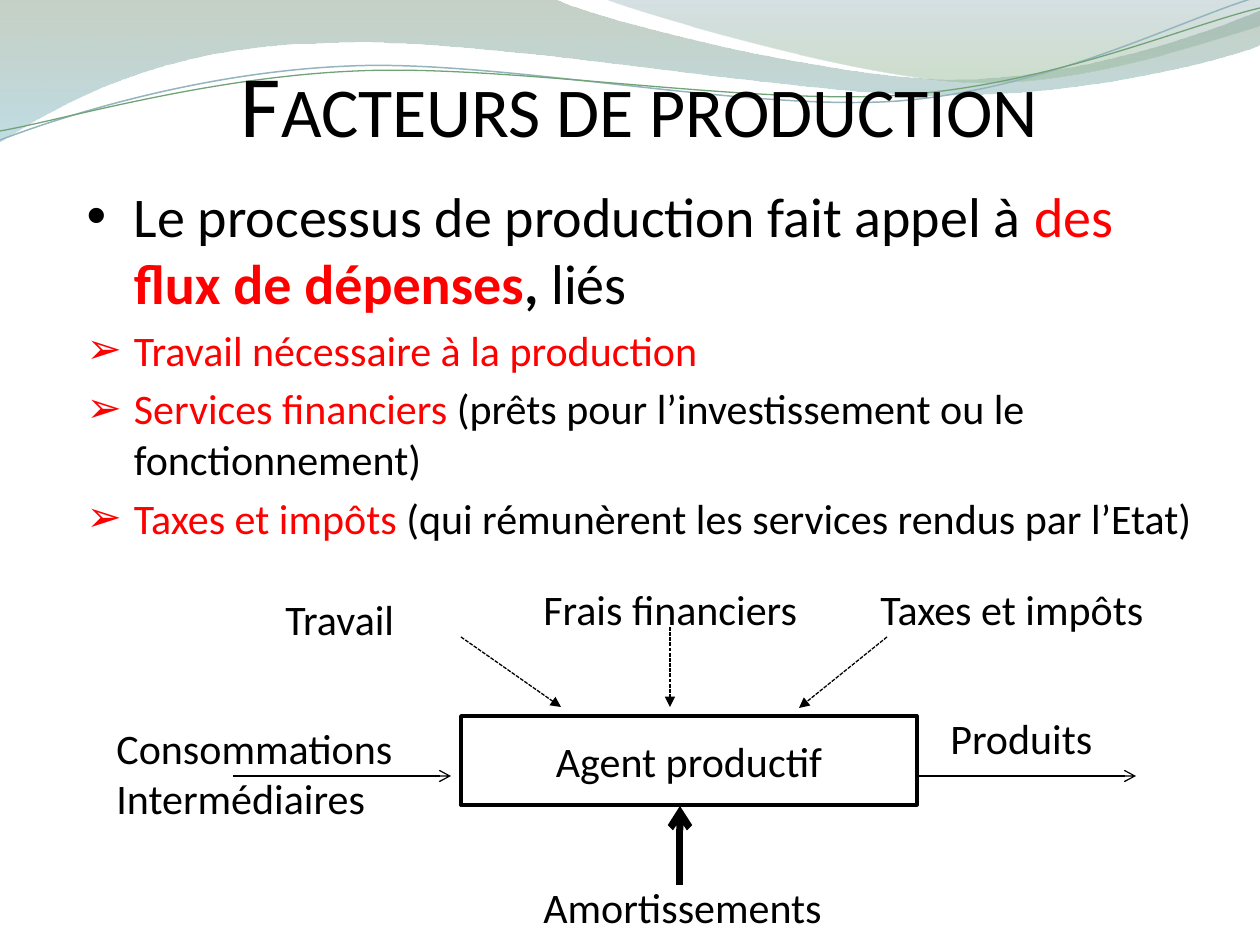
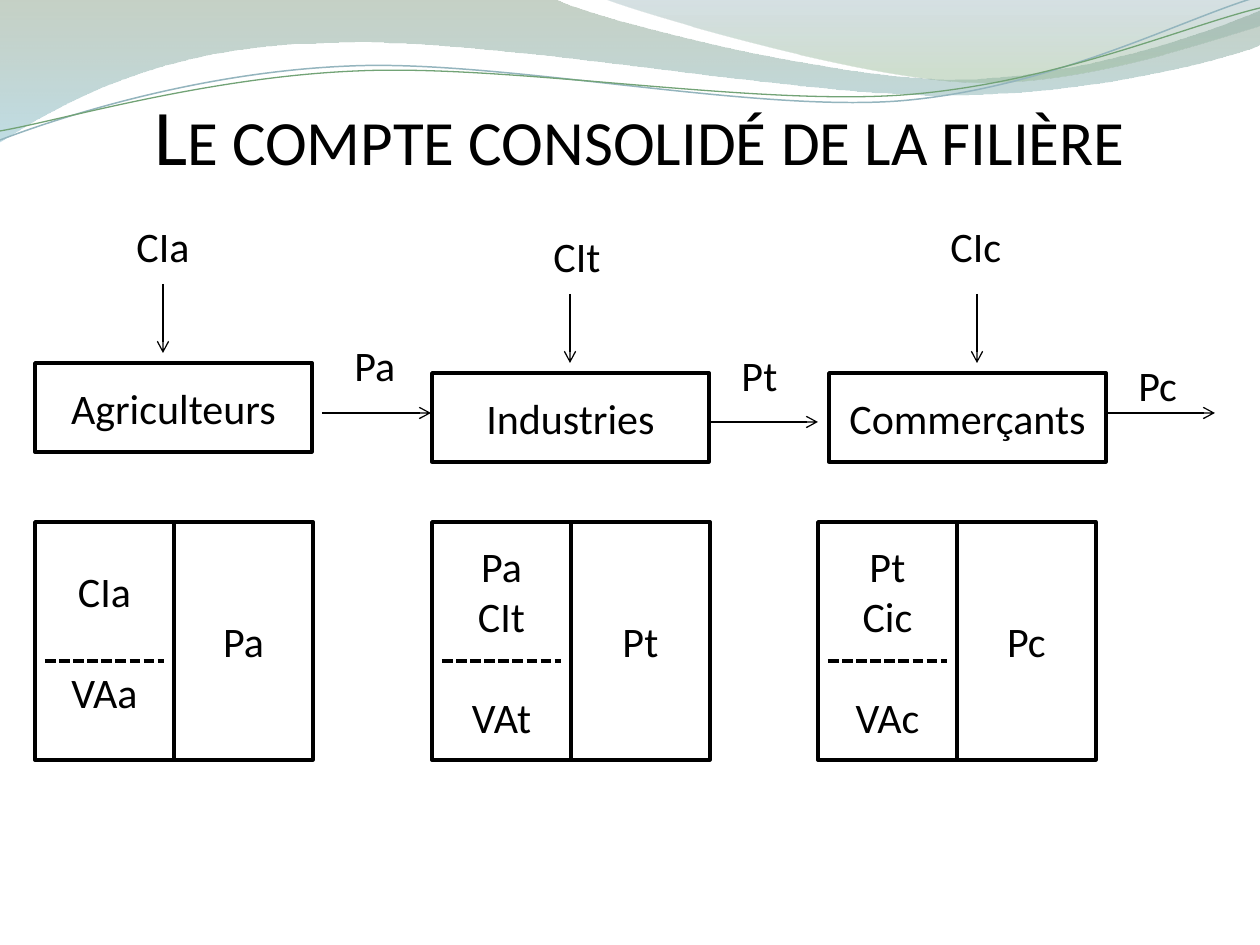
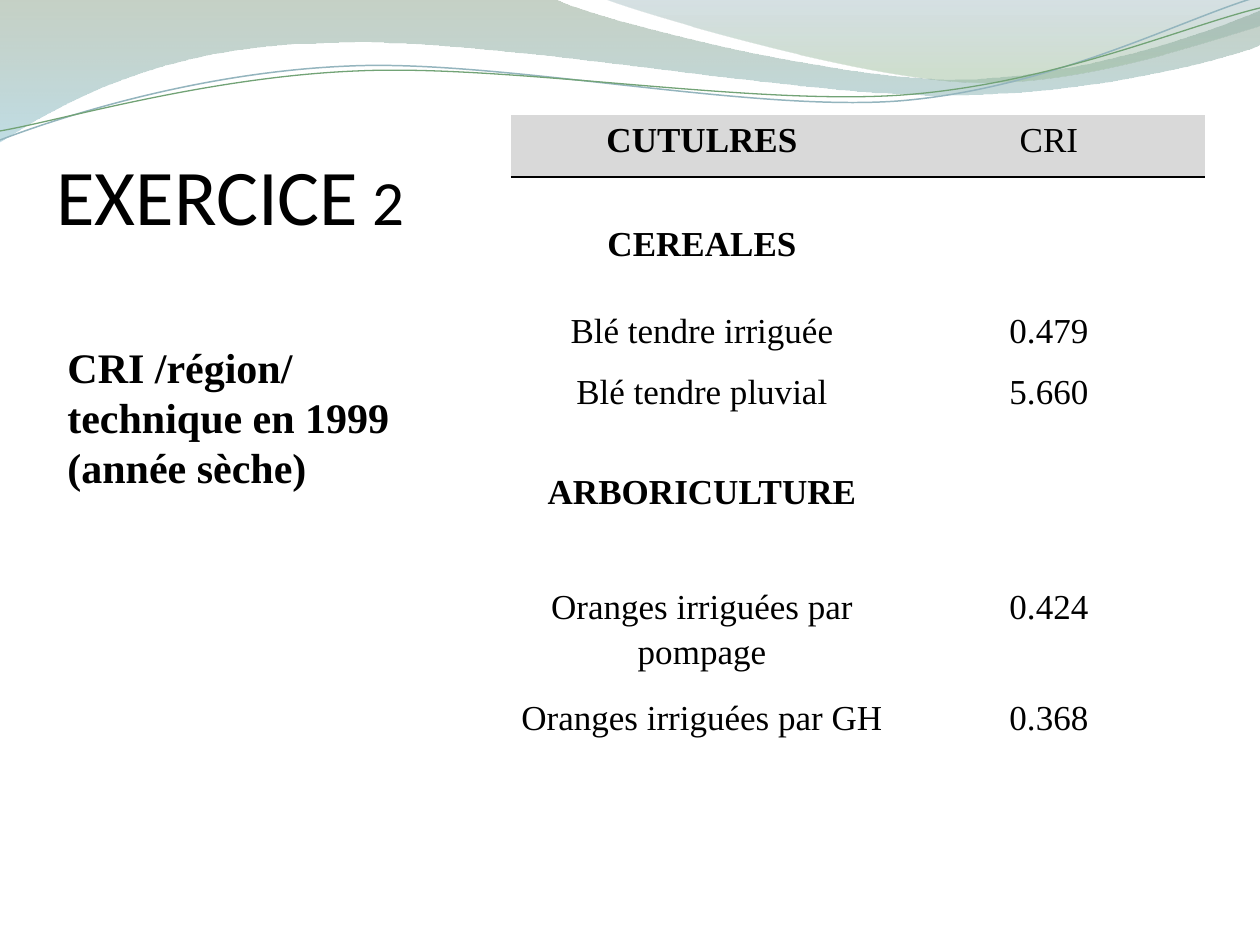
"""Build three slides on production factors, the consolidated account and an exercise."""
from lxml.etree import SubElement
from pptx import Presentation
from pptx.dml.color import RGBColor
from pptx.enum.dml import MSO_LINE
from pptx.enum.shapes import MSO_CONNECTOR, MSO_SHAPE
from pptx.enum.text import MSO_ANCHOR, MSO_AUTO_SIZE, PP_ALIGN
from pptx.oxml.ns import qn
from pptx.util import Pt

BLACK = RGBColor(0x00, 0x00, 0x00)
RED = RGBColor(0xFF, 0x00, 0x00)
HEADER_GREY = RGBColor(0xD9, 0xD9, 0xD9)
SAGE = RGBColor(0x80, 0x99, 0x80)
AQUA = RGBColor(0x8D, 0xC1, 0xCF)
STEEL = RGBColor(0x77, 0x9B, 0xA4)
LEAF = RGBColor(0x96, 0xB9, 0x96)
WAVE_BLUE = RGBColor(0x94, 0xB5, 0xBE)
WAVE_GREEN = RGBColor(0x72, 0xA3, 0x76)

SANS, SERIF = "Calibri", "Times New Roman"
TEXT_SIZE = 24
LABEL_HEIGHT = 63
NO_TABLE_STYLE = "{2D5ABB26-0587-4C30-8999-92F81FD0307C}"

# Each band: start, line or curve segments, gradient stops (colour, position, opacity).
BANDS = [
    ((0, 0), [
        [(554, -1)],
        [(600, 21), (837, 79), (955, 79)],
        [(1075, 79), (1207, 33), (1260, 11)],
        [(1261, 45)],
        [(1239, 55), (1096, 96), (940, 95)],
        [(784, 95), (481, 35), (324, 43)],
        [(162, 45), (58, 105), (-1, 142)],
        [(0, 0)],
    ], [(SAGE, 0, 45), (AQUA, 1, 55)]),
    ((604, -1), [
        [(641, 14), (859, 78), (969, 82)],
        [(1079, 87), (1211, 40), (1260, 26)],
        [(1260, 0)],
        [(604, -1)],
    ], [(STEEL, 0, 30), (LEAF, 0.8, 45)]),
]
WAVE_LINES = [
    ((0, 140), [
        [(60, 117), (199, 72), (349, 66)],
        [(498, 59), (747, 112), (898, 101)],
        [(1050, 89), (1182, 19), (1257, -3)],
    ], WAVE_BLUE, 0.85),
    ((0, 131), [
        [(59, 121), (207, 77), (357, 71)],
        [(508, 64), (752, 106), (903, 95)],
        [(1053, 84), (1185, 26), (1260, 8)],
    ], WAVE_GREEN, 0.75),
]

FACTORS_TITLE = ("Facteurs de production", 50, (104, 0, 1071, 155))
FACTORS_BODY = (74, 175, 1142, 397)
FACTORS = [
    (None, 32, [("Le processus de production fait appel à ", BLACK, False), ("des ", RED, False),
                ("flux de dépenses", RED, True), (", ", BLACK, True), ("liés", BLACK, False)]),
    ("➢", 24, [("Travail nécessaire à la production", RED, False)]),
    ("➢", 24, [("Services financiers ", RED, False),
               ("(prêts pour l’investissement ou le fonctionnement)", BLACK, False)]),
    ("➢", 24, [("Taxes et impôts ", RED, False),
               ("(qui rémunèrent les services rendus par l’Etat)", BLACK, False)]),
]
AGENT = ("Agent productif", (461, 716, 456, 89))
FLOW_LABELS = [
    ("Produits", 938, 706, 238),
    ("Consommations Intermédiaires", 104, 716, 328),
    ("Amortissements", 531, 875, 328),
    ("Travail", 273, 587, 159),
    ("Frais financiers", 531, 577, 318),
    ("Taxes et impôts", 868, 577, 328),
]
FLOW_ARROWS = [
    ((917, 776), (1136, 776), 0.75, "arrow", False),
    ((233, 776), (451, 776), 0.75, "arrow", False),
    ((680, 885), (680, 806), 4, "arrow", False),
    ((461, 637), (561, 707), 0.75, "triangle", True),
    ((670, 627), (670, 707), 0.75, "triangle", True),
    ((887, 637), (799, 708), 0.75, "triangle", True),
]

ACCOUNT_TITLE = ("Le compte consolidé de la filière", 45, (104, 36, 1071, 145))
STAGES = [
    {"name": "Agriculteurs", "box": (35, 363), "ledger": 35,
     "input": ("CIa", 124, 214), "input_arrow": (163, 284),
     "output": ("Pa", 342, 333), "output_arrow": (322, 413),
     "costs": ["CIa"], "value_added": "VAa"},
    {"name": "Industries", "box": (432, 373), "ledger": 432,
     "input": ("CIt", 541, 224), "input_arrow": (570, 294),
     "output": ("Pt", 729, 343), "output_arrow": (709, 422),
     "costs": ["Pa", "CIt"], "value_added": "VAt"},
    {"name": "Commerçants", "box": (829, 373), "ledger": 818,
     "input": ("CIc", 938, 214), "input_arrow": (977, 294),
     "output": ("Pc", 1126, 353), "output_arrow": (1106, 413),
     "costs": ["Pt", "Cic"], "value_added": "VAc"},
]
STAGE_SIZE = (277, 89)
LEDGER_TOP, LEDGER_COLUMN, LEDGER_HEIGHT = 522, 139, 238

EXERCISE_TITLE = ("EXERCICE 2", 45, (0, 145, 461, 96))
EXERCISE_NOTE = ("CRI /région/ technique en 1999 (année sèche)", (55, 283, 382, 246))
CROP_TABLE = (511, 115)
CROP_COLUMNS = [382, 312]
CROP_ROWS = [
    ("CUTULRES", "CRI", 62, 0),
    ("CEREALES", "", 129, 42),
    ("Blé tendre irriguée", "0.479", 62, 0),
    ("Blé tendre pluvial", "5.660", 62, 0),
    ("ARBORICULTURE", "", 153, 38),
    ("Oranges irriguées par pompage", "0.424", 111, 0),
    ("Oranges irriguées par GH", "0.368", 166, 0),
]


def px(length):
    return round(length * 914400 / 126)


def place(shape, box):
    shape.left, shape.top, shape.width, shape.height = map(px, box)


def add_run(paragraph, text, size=TEXT_SIZE, color=BLACK, bold=False, font=SANS):
    run = paragraph.add_run()
    run.text = text
    run.font.name, run.font.size, run.font.bold = font, Pt(size), bold
    run.font.color.rgb = color
    return run


def add_paragraph(frame, index):
    return frame.add_paragraph() if index else frame.paragraphs[0]


def add_wave(slide, start, segments, closed):
    points = [tuple(map(px, point)) for segment in segments for point in segment]
    builder = slide.shapes.build_freeform(*map(px, start))
    builder.add_line_segments(points, close=closed)
    shape = builder.convert_to_shape()
    shape.shadow.inherit = False
    outline = next(shape.element.iter(qn("a:path")))
    corners = iter(outline.findall(qn("a:lnTo")))
    for segment in segments:
        target = next(corners)
        if len(segment) == 3:
            curve = SubElement(outline, qn("a:cubicBezTo"))
            target.addprevious(curve)
            for corner in (target, next(corners), next(corners)):
                curve.append(corner[0])
                outline.remove(corner)
    return shape


def decorate_master(presentation, slide):
    waves = []
    for start, segments, stops in BANDS:
        band = add_wave(slide, start, segments, True)
        band.line.fill.background()
        band.fill.gradient()
        band.fill.gradient_angle = 270
        for stop, (color, position, opacity) in zip(band.fill.gradient_stops, stops):
            stop.color.rgb = color
            stop.position = position
        colors = band.element.spPr.iter(qn("a:srgbClr"))
        for element, (color, position, opacity) in zip(colors, stops):
            SubElement(element, qn("a:alpha"), val=str(opacity * 1000))
        waves.append(band)
    for start, segments, color, width in WAVE_LINES:
        wave = add_wave(slide, start, segments, False)
        wave.fill.background()
        wave.line.color.rgb, wave.line.width = color, Pt(width)
        waves.append(wave)
    tree = presentation.slide_master.shapes.element
    for index, wave in enumerate(waves):
        tree.insert(2 + index, wave.element)


def set_title(slide, text, size, box):
    title = slide.shapes.title
    place(title, box)
    frame = title.text_frame
    frame.auto_size, frame.word_wrap = MSO_AUTO_SIZE.NONE, True
    frame.vertical_anchor = MSO_ANCHOR.BOTTOM
    frame.margin_left = frame.margin_right = frame.margin_bottom = 0
    frame.margin_top = px(6)
    paragraph = frame.paragraphs[0]
    paragraph.alignment = PP_ALIGN.CENTER
    run = add_run(paragraph, text, size)
    run._r.rPr.set("cap", "small")


def add_label(slide, text, left, top, width):
    label = slide.shapes.add_textbox(px(left), px(top), px(width), px(LABEL_HEIGHT))
    label.text_frame.word_wrap = True
    add_run(label.text_frame.paragraphs[0], text)


def add_box(slide, lines, box):
    shape = slide.shapes.add_shape(MSO_SHAPE.RECTANGLE, *map(px, box))
    shape.shadow.inherit = False
    shape.fill.background()
    shape.line.color.rgb, shape.line.width = BLACK, Pt(2)
    frame = shape.text_frame
    frame.word_wrap, frame.vertical_anchor = True, MSO_ANCHOR.MIDDLE
    for index, text in enumerate(lines):
        paragraph = add_paragraph(frame, index)
        paragraph.alignment = PP_ALIGN.CENTER
        add_run(paragraph, text)
    return frame


def add_line(slide, start, end, width=0.75, head=None, dashed=False):
    connector = slide.shapes.add_connector(MSO_CONNECTOR.STRAIGHT, *map(px, (*start, *end)))
    line = connector.line
    line.color.rgb, line.width = BLACK, Pt(width)
    if dashed:
        line.dash_style = MSO_LINE.SQUARE_DOT
    properties = connector.element.spPr
    if head:
        SubElement(properties.find(qn("a:ln")), qn("a:tailEnd"), type=head)
    SubElement(properties, qn("a:effectLst"))


def build_factors(slide):
    set_title(slide, *FACTORS_TITLE)
    body = slide.placeholders[1]
    place(body, FACTORS_BODY)
    frame = body.text_frame
    frame.auto_size = MSO_AUTO_SIZE.NONE
    for index, (bullet, size, runs) in enumerate(FACTORS):
        paragraph = add_paragraph(frame, index)
        if bullet:
            SubElement(paragraph._p.get_or_add_pPr(), qn("a:buChar"), char=bullet)
        for text, color, bold in runs:
            add_run(paragraph, text, size, color, bold)
    name, box = AGENT
    add_box(slide, [name], box)
    for arrow in FLOW_ARROWS:
        add_line(slide, *arrow)
    for label in FLOW_LABELS:
        add_label(slide, *label)


def build_account(slide):
    set_title(slide, *ACCOUNT_TITLE)
    for stage in STAGES:
        add_box(slide, [stage["name"]], (*stage["box"], *STAGE_SIZE))
        x, y = stage["input_arrow"]
        add_line(slide, (x, y), (x, y + 69), head="arrow")
        x, y = stage["output_arrow"]
        add_line(slide, (x, y), (x + 109, y), head="arrow")
        for key in ("input", "output"):
            add_label(slide, *stage[key], 79)
        left = stage["ledger"]
        column = (LEDGER_TOP, LEDGER_COLUMN, LEDGER_HEIGHT)
        add_box(slide, [stage["output"][0]], (left + LEDGER_COLUMN, *column))
        costs = add_box(slide, [*stage["costs"], stage["value_added"]], (left, *column))
        costs.paragraphs[-1].space_before = Pt(29)
        add_line(slide, (left + 10, 661), (left + 129, 661), 2, dashed=True)


def add_bottom_border(cell):
    border = SubElement(cell._tc.get_or_add_tcPr(), qn("a:lnB"), w=str(Pt(1)))
    fill = SubElement(border, qn("a:solidFill"))
    SubElement(fill, qn("a:srgbClr"), val=str(BLACK))
    cell._tc.tcPr.insert(0, border)


def build_exercise(slide):
    set_title(slide, *EXERCISE_TITLE)
    text, box = EXERCISE_NOTE
    note = slide.shapes.add_textbox(*map(px, box)).text_frame
    note.word_wrap, note.margin_top = True, px(58)
    add_run(note.paragraphs[0], text, bold=True, font=SERIF)

    heights = [height for crop, value, height, margin in CROP_ROWS]
    area = (*CROP_TABLE, sum(CROP_COLUMNS), sum(heights))
    table = slide.shapes.add_table(len(CROP_ROWS), len(CROP_COLUMNS), *map(px, area)).table
    table.first_row = table.horz_banding = False
    table._tbl.tblPr.find(qn("a:tableStyleId")).text = NO_TABLE_STYLE
    for column, width in zip(table.columns, CROP_COLUMNS):
        column.width = px(width)
    for row_index, (crop, value, height, margin) in enumerate(CROP_ROWS):
        table.rows[row_index].height = px(height)
        is_header, is_group = row_index == 0, not value
        for column_index, text in enumerate((crop, value)):
            cell = table.cell(row_index, column_index)
            cell.margin_left = cell.margin_right = px(9)
            cell.margin_top, cell.margin_bottom = px(margin), 0
            if is_header:
                cell.fill.solid()
                cell.fill.fore_color.rgb = HEADER_GREY
                add_bottom_border(cell)
            else:
                cell.fill.background()
            if text:
                paragraph = cell.text_frame.paragraphs[0]
                paragraph.alignment, paragraph.line_spacing = PP_ALIGN.CENTER, 1.15
                bold = column_index == 0 and (is_header or is_group)
                add_run(paragraph, text, 20, bold=bold, font=SERIF)


def main():
    presentation = Presentation()
    presentation.slide_width, presentation.slide_height = px(1260), px(945)
    content_layout, title_layout = (presentation.slide_layouts[i] for i in (1, 5))
    pages = [(content_layout, build_factors), (title_layout, build_account),
             (title_layout, build_exercise)]
    for index, (layout, build) in enumerate(pages):
        slide = presentation.slides.add_slide(layout)
        if index == 0:
            decorate_master(presentation, slide)
        build(slide)
    presentation.save("out.pptx")


if __name__ == "__main__":
    main()
